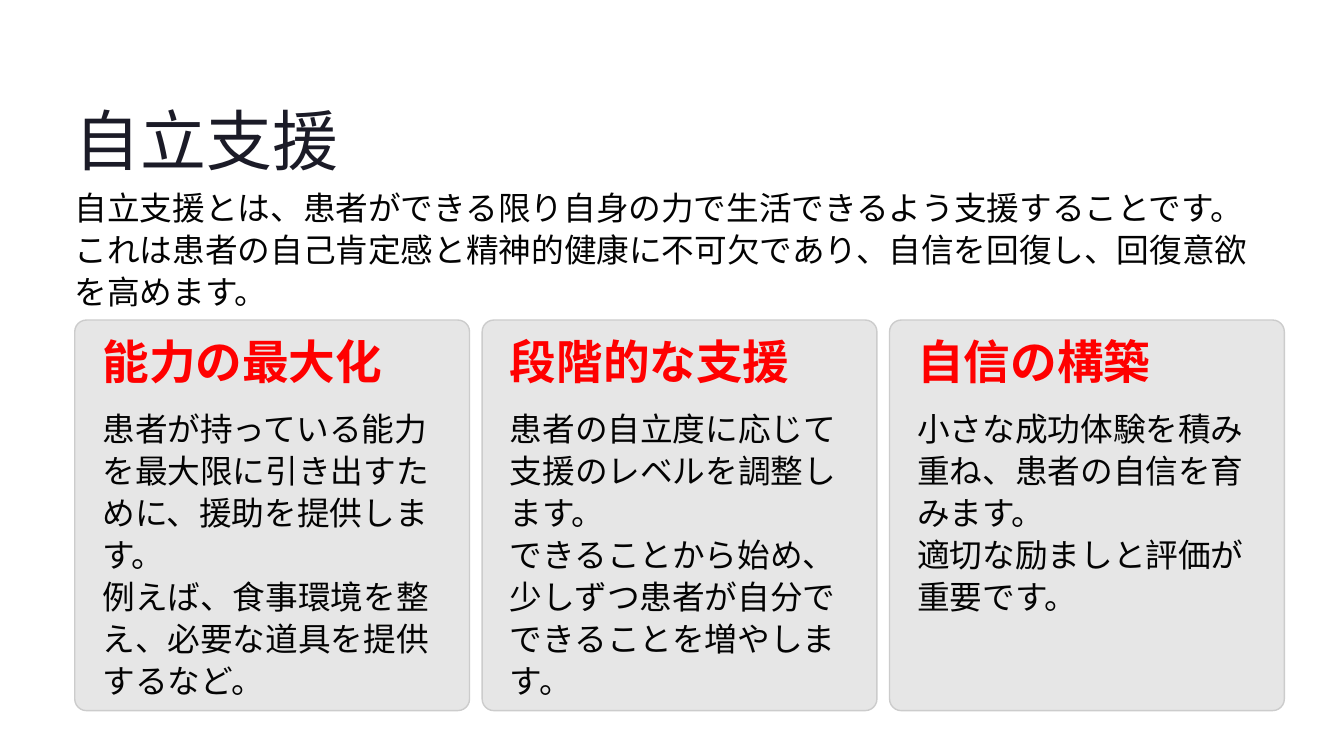
"""Build the slide on supporting patient independence."""
from pptx import Presentation
from pptx.dml.color import RGBColor
from pptx.enum.shapes import MSO_SHAPE as Shape
from pptx.enum.text import MSO_ANCHOR as Anchor, MSO_AUTO_SIZE as AutoSize, PP_ALIGN as Align
from pptx.util import Inches, Pt

INK = RGBColor(0x1B, 0x1B, 0x27)
BODY = RGBColor(0x03, 0x03, 0x03)
RED = RGBColor(0xFF, 0x00, 0x00)
CARD_FILL = RGBColor(0xE6, 0xE6, 0xE6)
CARD_LINE = RGBColor(0xCC, 0xCC, 0xCC)

LEFT = 0.89
CARD_TOP, CARD_WIDTH, CARD_HEIGHT = 3.81, 4.7, 4.65
CARD_GAP = 0.15
PADDING = 0.33
TEXT_WIDTH = 4.01

INTRO = "自立支援とは、患者ができる限り自身の力で生活できるよう支援することです。これは患者の自己肯定感と精神的健康に不可欠であり、自信を回復し、回復意欲を高めます。"
CARDS = [
    ("能力の最大化", [
        "患者が持っている能力を最大限に引き出すために、援助を提供します。",
        "例えば、食事環境を整え、必要な道具を提供するなど。",
    ]),
    ("段階的な支援", [
        "患者の自立度に応じて支援のレベルを調整します。",
        "できることから始め、少しずつ患者が自分でできることを増やします。",
    ]),
    ("自信の構築", [
        "小さな成功体験を積み重ね、患者の自信を育みます。",
        "適切な励ましと評価が重要です。",
    ]),
]


class SlideBuilder:
    heading_font = "Inter"
    body_font = "Karla"

    def __init__(self, presentation):
        self.slide = presentation.slides.add_slide(presentation.slide_layouts[5])

    def set_text(self, shape, lines, font, size, spacing, color, bold=False):
        frame = shape.text_frame
        frame.margin_left = frame.margin_right = 0
        frame.margin_top = frame.margin_bottom = 0
        frame.word_wrap = True
        frame.auto_size = AutoSize.NONE
        frame.vertical_anchor = Anchor.TOP
        for index, line in enumerate(lines):
            paragraph = frame.add_paragraph() if index else frame.paragraphs[0]
            paragraph.alignment = Align.LEFT
            paragraph.line_spacing = Pt(spacing)
            paragraph.space_before = paragraph.space_after = Pt(0)
            run = paragraph.add_run()
            run.text = line
            run.font.name = font
            run.font.size = Pt(size)
            run.font.bold = bold
            run.font.color.rgb = color

    def title(self, text, left, top, width, height):
        shape = self.slide.shapes.title
        shape.left, shape.top = Inches(left), Inches(top)
        shape.width, shape.height = Inches(width), Inches(height)
        self.set_text(shape, [text], self.heading_font, 56.5, 71, INK)

    def text_box(self, left, top, width, height):
        return self.slide.shapes.add_textbox(
            Inches(left), Inches(top), Inches(width), Inches(height))

    def heading(self, text, left, top, width, height):
        box = self.text_box(left, top, width, height)
        self.set_text(box, [text], self.heading_font, 40, 35.5, RED, bold=True)

    def body(self, lines, left, top, width, height):
        box = self.text_box(left, top, width, height)
        self.set_text(box, lines, self.body_font, 28, 36, BODY)

    def panel(self, left, top, width, height):
        shape = self.slide.shapes.add_shape(
            Shape.ROUNDED_RECTANGLE, Inches(left), Inches(top), Inches(width), Inches(height))
        shape.adjustments[0] = 0.03
        shape.shadow.inherit = False
        shape.fill.solid()
        shape.fill.fore_color.rgb = CARD_FILL
        shape.line.color.rgb = CARD_LINE
        shape.line.width = Pt(1.2)

    def card(self, left, heading, lines):
        self.panel(left, CARD_TOP, CARD_WIDTH, CARD_HEIGHT)
        self.heading(heading, left + PADDING, 4.14, TEXT_WIDTH, 0.59)
        self.body(lines, left + PADDING, 4.83, TEXT_WIDTH, 3.03)


def main():
    presentation = Presentation()
    presentation.slide_width, presentation.slide_height = Inches(16), Inches(9)
    builder = SlideBuilder(presentation)
    builder.title("自立支援", LEFT, 1.14, 7.91, 0.99)
    builder.body([INTRO], LEFT, 2.2, 14.23, 1.01)
    for column, (heading, lines) in enumerate(CARDS):
        builder.card(LEFT + column * (CARD_WIDTH + CARD_GAP), heading, lines)
    presentation.save("out.pptx")


if __name__ == "__main__":
    main()
